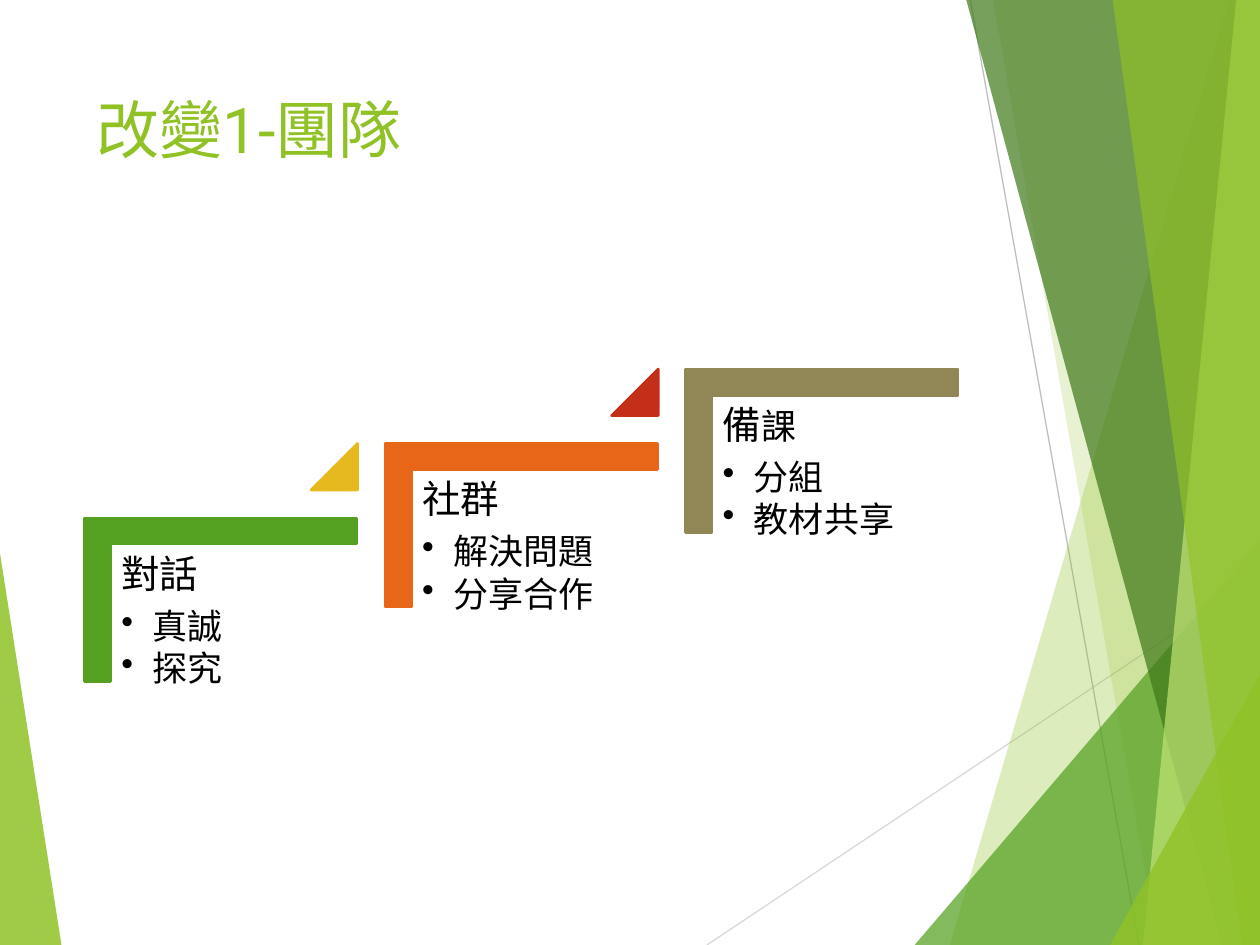
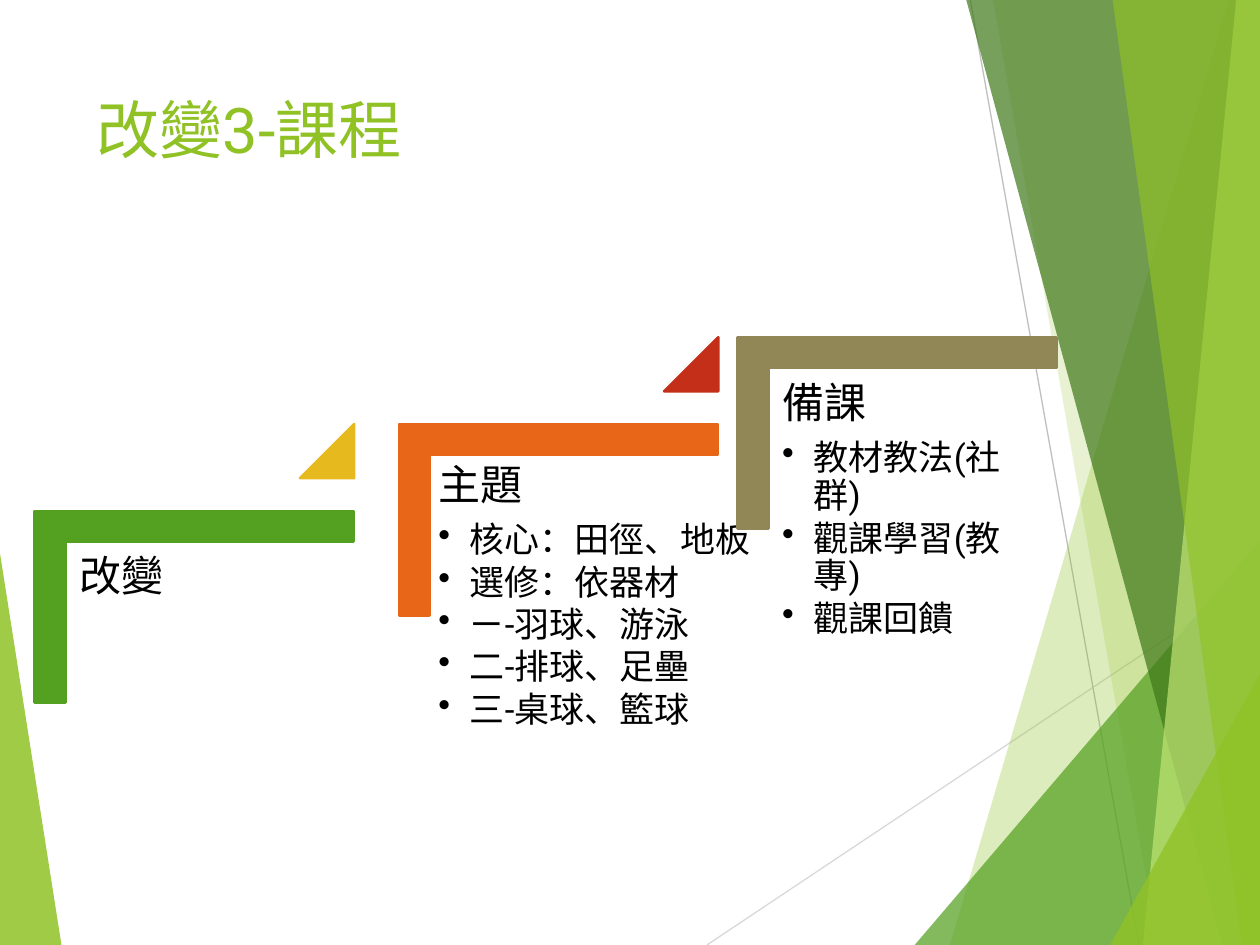
from dataclasses import dataclass
from lxml import etree
from pptx import Presentation
from pptx.dml.color import RGBColor
from pptx.enum.shapes import MSO_CONNECTOR, MSO_SHAPE
from pptx.enum.text import MSO_ANCHOR, MSO_AUTO_SIZE, PP_ALIGN
from pptx.oxml.ns import qn
from pptx.util import Cm, Pt

CORNER = MSO_SHAPE.CORNER
WEDGE = MSO_SHAPE.ISOSCELES_TRIANGLE
STRAIGHT = MSO_CONNECTOR.STRAIGHT
TOP = MSO_ANCHOR.TOP
LEFT = PP_ALIGN.LEFT
FIXED = MSO_AUTO_SIZE.NONE
WIDE, HIGH = 25.4, 19.05


@dataclass(frozen=True)
class Theme:
    font: str = "Roboto"
    lime: str = "90C226"
    green: str = "54A021"
    dark: str = "3F7819"
    pale: str = "C0E474"
    gold: str = "E6B91E"
    orange: str = "E76618"
    red: str = "C42F1A"
    olive: str = "918655"
    black: str = "000000"
    light: str = "D9D9D9"
    gray: str = "BFBFBF"
    title: int = 36
    item: int = 20
    edge: float = 1.5
    hair: float = 0.75


THEME = Theme()
STEPS = (THEME.green, THEME.orange, THEME.olive)
WEDGES = (THEME.gold, THEME.red)


def band(top, base):
    return [(top, 0), (base, HIGH), (WIDE, HIGH), (WIDE, 0)]


def peak(base, rise):
    return [(base, HIGH), (WIDE, rise), (WIDE, HIGH)]


LEAVES = (
    ([(0, 11.15), (1.24, HIGH), (0, HIGH)], THEME.lime, 85),
    (band(24.77, 19.15), THEME.lime, 30),
    (band(20.02, 23.34), THEME.lime, 20),
    (peak(18.44, 10.9), THEME.green, 72),
    (band(19.48, 24.64), THEME.dark, 70),
    (band(24.92, 23.04), THEME.pale, 70),
    (band(22.43, 25.04), THEME.lime, 65),
    (peak(22.38, 13.59), THEME.lime, 80),
)
RAYS = (
    ((14.25, HIGH, WIDE, 11.61), THEME.light),
    ((19.56, 0, 22.96, HIGH), THEME.gray),
)

PAGES = (
    {
        "title": "改變1-團隊",
        "top": 10.44, "rise": 1.5, "size": (5.49, 3.3),
        "wedge": (4.57, 0.94), "tall": 4.34, "pad": 0.2,
        "steps": (
            (1.7, 0.55, 4.95, [("對話", 22)], ["真誠", "探究"]),
            (7.76, 0.55, 4.95, [("社群", 22)], ["解決問題", "分享合作"]),
            (13.82, 0.55, 4.95, [("備", 22), ("課", 20)], ["分組", "教材共享"]),
        ),
    },
    {
        "title": "改變3-課程",
        "top": 10.3, "rise": 1.75, "size": (6.43, 3.86),
        "wedge": (5.35, 1.09), "tall": 5.08, "pad": 0.25,
        "steps": (
            (0.7, 0.65, 5.79, [("改變", 24)], []),
            (8.04, 0.55, 7.57, [("主題", 24)],
             ["核心：田徑、地板", "選修：依器材", "ㄧ-羽球、游泳",
              "二-排球、足壘", "三-桌球、籃球"]),
            (14.87, 0.65, 5.79, [("備課", 24)],
             ["教材教法(社群)", "觀課學習(教專)", "觀課回饋"]),
        ),
    },
)


def put(thing, values):
    for name, value in values.items():
        setattr(thing, name, value)


class Deck:
    def __init__(self, theme):
        self.theme = theme
        self.show = Presentation()
        put(self.show, {"slide_width": Cm(WIDE), "slide_height": Cm(HIGH)})
        self.layout = self.show.slide_layouts[5]
        self.tree = self.layout.shapes.element
        for holder in list(self.layout.placeholders)[1:]:
            self.tree.remove(holder.element)

    def open(self, text):
        self.slide = self.show.slides.add_slide(self.layout)
        if len(self.show.slides) == 1:
            self.decor()
        title = self.slide.shapes.title
        put(title, {"left": Cm(1.7), "top": Cm(1.7),
                    "width": Cm(17.63), "height": Cm(3.66)})
        put(title.text_frame, {"vertical_anchor": TOP, "auto_size": FIXED,
                               "word_wrap": True})
        para = title.text_frame.paragraphs[0]
        para.alignment = LEFT
        self.run(para, text, self.theme.title, self.theme.lime)

    def decor(self):
        first, *rest = LEAVES
        marks = [self.leaf(*first)]
        marks += [self.ray(*ray) for ray in RAYS]
        marks += [self.leaf(*leaf) for leaf in rest]
        for mark in marks:
            self.tree.append(mark.element)

    def leaf(self, points, color, alpha):
        start, *rest = [(Cm(x), Cm(y)) for x, y in points]
        pen = self.slide.shapes.build_freeform(*start)
        pen.add_line_segments(rest, close=True)
        shape = pen.convert_to_shape()
        self.paint(shape, color)
        shape.line.fill.background()
        tint = shape.element.spPr.find(qn("a:solidFill"))[0]
        etree.SubElement(tint, qn("a:alpha"), val=str(alpha * 1000))
        return shape

    def ray(self, ends, color):
        line = self.slide.shapes.add_connector(STRAIGHT, *map(Cm, ends))
        line.line.color.rgb = RGBColor.from_string(color)
        line.line.width = Pt(self.theme.hair)
        etree.SubElement(line.element.spPr, qn("a:effectLst"))
        return line

    def paint(self, shape, color):
        shape.shadow.inherit = False
        shape.fill.solid()
        shape.fill.fore_color.rgb = RGBColor.from_string(color)

    def block(self, kind, box, color, ratio, turn=0):
        shape = self.slide.shapes.add_shape(kind, *map(Cm, box))
        self.paint(shape, color)
        shape.line.color.rgb = RGBColor.from_string(color)
        put(shape, {"rotation": turn})
        put(shape.line, {"width": Pt(self.theme.edge)})
        for index in range(len(shape.adjustments)):
            shape.adjustments[index] = ratio

    def corner(self, left, top, wide, high, color):
        shift = (wide - high) / 2
        box = (left + shift, top - shift, high, wide)
        self.block(CORNER, box, color, 0.161, 90)

    def run(self, para, text, size, color):
        run = para.add_run()
        run.text = text
        put(run.font, {"name": self.theme.font, "size": Pt(size)})
        run.font.color.rgb = RGBColor.from_string(color)

    def space(self, para, after):
        put(para, {"alignment": LEFT, "line_spacing": 0.9,
                   "space_before": Pt(0), "space_after": Pt(after)})

    def text(self, box, pad, head, items):
        frame = self.slide.shapes.add_textbox(*map(Cm, box)).text_frame
        put(frame, {"word_wrap": True, "vertical_anchor": TOP})
        put(frame, {f"margin_{side}": Cm(pad)
                    for side in ("left", "top", "right", "bottom")})
        para = frame.paragraphs[0]
        self.space(para, head[0][1] * 0.32)
        for words, size in head:
            self.run(para, words, size, self.theme.black)
        for item in items:
            self.bullet(frame.add_paragraph(), item)

    def bullet(self, para, item):
        self.space(para, self.theme.item * 0.13)
        para.level = 1
        self.run(para, item, self.theme.item, self.theme.black)
        props = para._p.get_or_add_pPr()
        props.set("marL", str(Cm(0.63)))
        props.set("indent", str(Cm(-0.63)))
        etree.SubElement(props, qn("a:buChar"), char="•")

    def stairs(self, page):
        far, side = page["wedge"]
        for index, step in enumerate(page["steps"]):
            left, inset, wide, head, items = step
            top = page["top"] - index * page["rise"]
            self.corner(left, top, *page["size"], STEPS[index])
            box = (left + inset, top + inset, wide, page["tall"])
            self.text(box, page["pad"], head, items)
            if index < len(WEDGES):
                box = (left + far, top - page["rise"], side, side)
                self.block(WEDGE, box, WEDGES[index], 1)


def main():
    deck = Deck(THEME)
    for page in PAGES:
        deck.open(page["title"])
        deck.stairs(page)
    deck.show.save("out.pptx")


if __name__ == "__main__":
    main()
